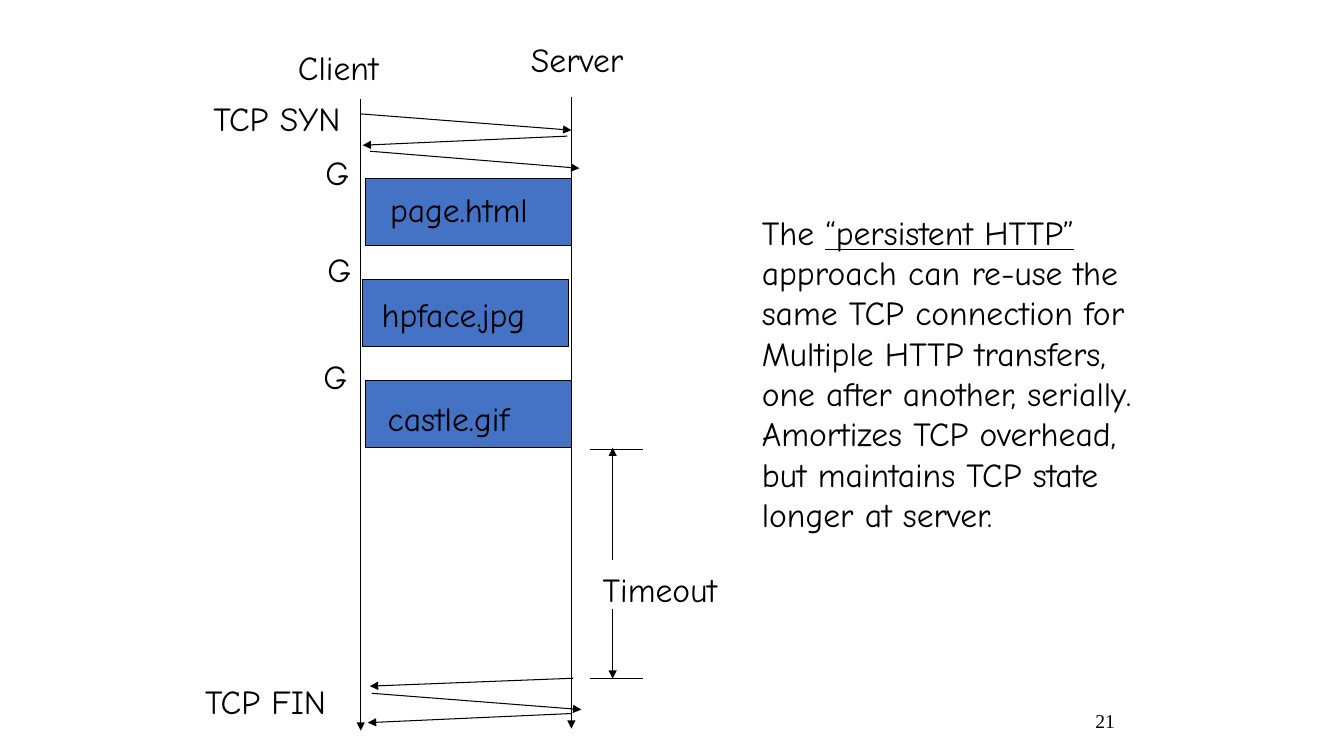
import dataclasses

import lxml.etree
import pptx
import pptx.dml.color
import pptx.enum.shapes
import pptx.enum.text
import pptx.oxml.ns
import pptx.util

Cm = pptx.util.Cm
HAND_FONT = "Comic Neue"
BLACK, BLUE = "000000", "4472C4"
LABEL_HEIGHT = 1.28


@dataclasses.dataclass
class Box:
    left: float
    top: float
    width: float
    height: float

    def inner(self, x, y, width, height):
        """Give a box placed relative to the corner of this one."""
        return Box(self.left + x, self.top + y, width, height)

    def lengths(self):
        return [Cm(value) for value in dataclasses.astuple(self)]


def color(hex_string):
    return pptx.dml.color.RGBColor.from_string(hex_string)


def add_text(page, box, lines, size=24, font=HAND_FONT):
    """Each line is a list of (text, underlined) spans."""
    text_box = page.shapes.add_textbox(*box.lengths())
    frame = text_box.text_frame
    frame.word_wrap = False
    frame.auto_size = pptx.enum.text.MSO_AUTO_SIZE.SHAPE_TO_FIT_TEXT
    for index, line in enumerate(lines):
        para = frame.add_paragraph() if index else frame.paragraphs[0]
        for text, underlined in line:
            span = para.add_run()
            span.text = text
            span.font.name = font
            span.font.size = pptx.util.Pt(size)
            span.font.color.rgb = color(BLACK)
            span.font.underline = underlined
    return frame


def add_label(page, box, text):
    add_text(page, box, [[(text, False)]])


def add_line(page, box, x1, y1, x2, y2, arrow=True):
    line = page.shapes.add_connector(
        pptx.enum.shapes.MSO_CONNECTOR.STRAIGHT,
        Cm(box.left + x1), Cm(box.top + y1), Cm(box.left + x2), Cm(box.top + y2))
    line.line.color.rgb = color(BLACK)
    line.line.width = pptx.util.Pt(0.75)
    qn = pptx.oxml.ns.qn
    properties = line.line.fill and line._element.spPr
    if arrow:
        outline = properties.find(qn("a:ln"))
        lxml.etree.SubElement(outline, qn("a:tailEnd"), type="triangle")
    lxml.etree.SubElement(properties, qn("a:effectLst"))


def draw_lifelines(page, box):
    add_line(page, box, 0, 0, 0, box.height)
    add_line(page, box, box.width, -0.05, box.width, box.height - 0.05)
    add_label(page, box.inner(-1.83, -1.42, 2.82, LABEL_HEIGHT), "Client")
    add_label(page, box.inner(4.04, -1.63, 3.28, LABEL_HEIGHT), "Server")


def draw_handshake(page, box, label, label_x, label_y, messages):
    for message in messages:
        add_line(page, box, *message)
    add_label(page, box.inner(label_x, label_y, 4.1, LABEL_HEIGHT), label)


def draw_transfer(page, box, name, name_x, name_y, request_x, request_y):
    block = page.shapes.add_shape(
        pptx.enum.shapes.MSO_SHAPE.RECTANGLE, *box.lengths())
    block.shadow.inherit = False
    block.fill.solid()
    block.fill.fore_color.rgb = color(BLUE)
    block.line.color.rgb = color(BLACK)
    block.line.width = pptx.util.Pt(0.75)
    add_label(page, box.inner(name_x, name_y, 4.4, LABEL_HEIGHT), name)
    add_label(page, box.inner(request_x, request_y, 1.12, LABEL_HEIGHT), "G")


def draw_timeout(page, box):
    middle = 0.58
    for y in (0, box.height):
        add_line(page, box, 0, y, box.width, y, arrow=False)
    add_line(page, box, middle, 2.79, middle, -0.05)
    add_line(page, box, middle, 4.01, middle, box.height)
    add_label(page, box.inner(0.08, 2.87, 3.76, LABEL_HEIGHT), "Timeout")


def draw_explanation(page, box):
    plain_lines = [
        "approach can re-use the",
        "same TCP connection for",
        "Multiple HTTP transfers,",
        "one after another, serially.",
        "Amortizes TCP overhead,",
        "but maintains TCP state",
        "longer at server.",
    ]
    first_line = [("The ", False), ("“persistent HTTP”", True)]
    add_text(page, box, [first_line] + [[(text, False)] for text in plain_lines])


def draw_page_number(page, box):
    frame = add_text(page, box, [[("21", False)]], 14, "Times New Roman")
    frame.auto_size = pptx.enum.text.MSO_AUTO_SIZE.NONE
    frame.word_wrap = True
    frame.vertical_anchor = pptx.enum.text.MSO_ANCHOR.MIDDLE
    frame.paragraphs[0].alignment = pptx.enum.text.PP_ALIGN.RIGHT


def draw_persistent_http(page):
    lanes = Box(9.09, 2.49, 5.31, 15.92)
    draw_lifelines(page, lanes)

    # Opening and closing of the connection
    draw_handshake(
        page, lanes.inner(0, 0.38, lanes.width, 1.37), "TCP SYN", -3.96, -0.53,
        [(0, 0, 5.31, 0.41), (5.21, 0.56, 0.05, 0.79), (0.23, 0.94, 5.51, 1.37)])
    draw_handshake(
        page, lanes.inner(0, 14.6, lanes.width, 1.12), "TCP FIN", -4.17, -0.05,
        [(5.36, 0, 0.23, 0.2), (0.28, 0.38, 5.56, 0.79), (5.31, 0.89, 0.18, 1.12)])

    # Serial transfers: block offset, name, name offset, request offset
    transfers = [
        (0.13, "page.html", 0.36, 0.13, -1.27, -0.79),
        (0.05, "hpface.jpg", 0.23, 0.23, -1.14, -0.89),
        (0.13, "castle.gif", 0.3, 0.33, -1.32, -0.74),
    ]
    for index, (x, *labels) in enumerate(transfers):
        draw_transfer(page, lanes.inner(x, 2.01 + 2.54 * index, 5.18, 1.7), *labels)

    # Idle time, explanation and page number
    draw_timeout(page, lanes.inner(5.77, 8.84, 1.35, 5.77))
    draw_explanation(page, Box(18.95, 5.21, 11.23, 8.46))
    draw_page_number(page, Box(22.43, 17.65, 5.92, 1.02))


def main():
    deck = pptx.Presentation()
    deck.slide_width, deck.slide_height = Cm(33.87), Cm(19.05)
    blank_layout = deck.slide_layouts[6]
    draw_persistent_http(deck.slides.add_slide(blank_layout))
    deck.save("out.pptx")


if __name__ == "__main__":
    main()
